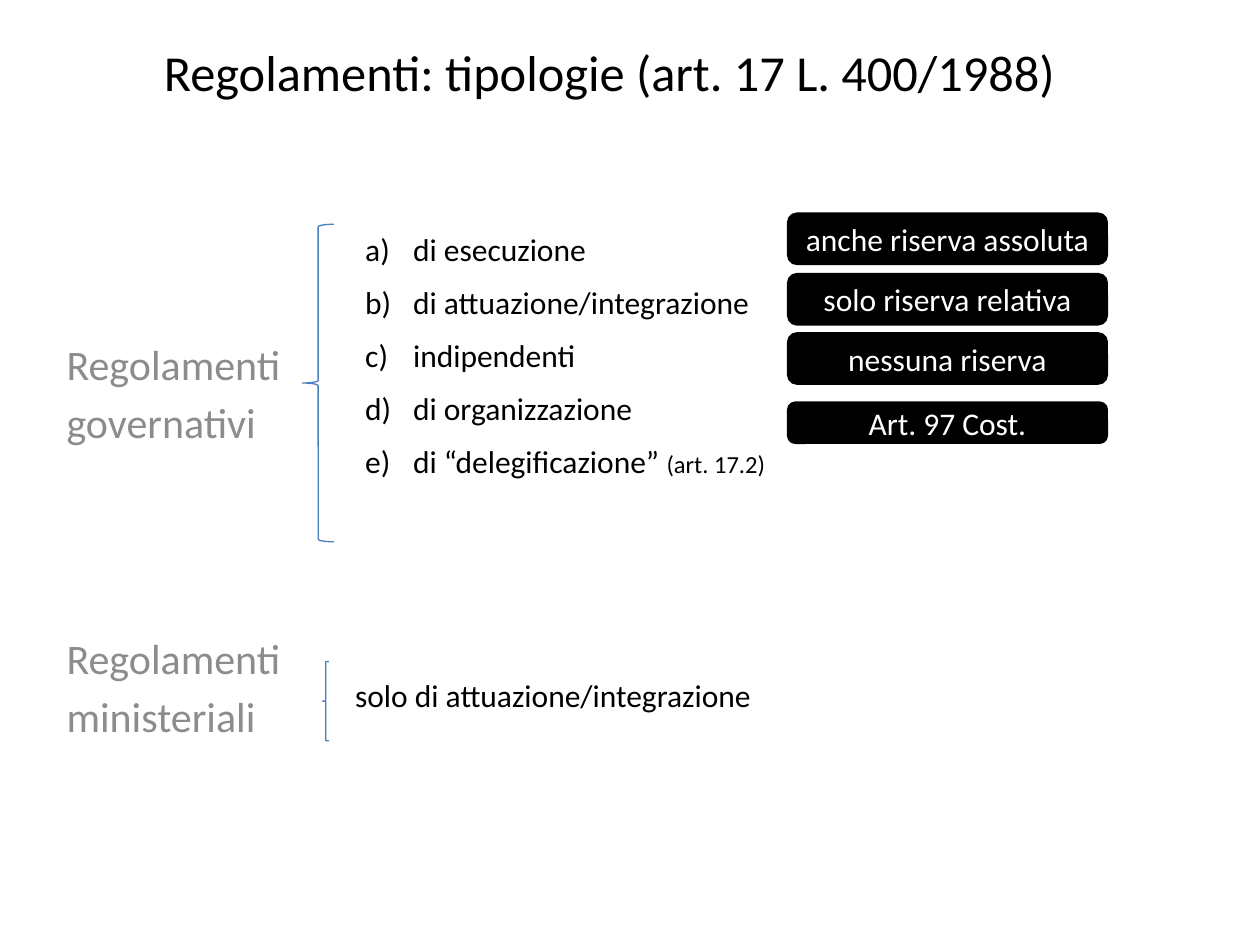
import dataclasses

import pptx
import pptx.dml.color
import pptx.enum.shapes
import pptx.enum.text
import pptx.oxml
import pptx.oxml.ns
import pptx.util

Inches = pptx.util.Inches
Pt = pptx.util.Pt
SHAPE = pptx.enum.shapes.MSO_SHAPE
ALIGN = pptx.enum.text.PP_ALIGN
ANCHOR = pptx.enum.text.MSO_ANCHOR


@dataclasses.dataclass(frozen=True)
class Theme:
    font: str = "Calibri"
    ink: str = "000000"
    muted: str = "8C8C8C"
    inverse: str = "FFFFFF"
    brace: str = "4B7EBC"
    title: float = 28.8
    label: float = 24
    body: float = 18
    note: float = 14


class SlideBuilder:
    """Draws the elements of one slide in a shared style."""

    def __init__(self, slide, theme):
        self.slide = slide
        self.theme = theme

    def color(self, value):
        return pptx.dml.color.RGBColor.from_string(value)

    def style(self, r, size, color):
        r.font.name = self.theme.font
        r.font.size = Pt(size)
        r.font.color.rgb = self.color(color)

    def text(self, box, lines, size, color=None, gap=0, align=ALIGN.LEFT, anchor=ANCHOR.TOP):
        sp = self.slide.shapes.add_textbox(*map(Inches, box))
        tf = sp.text_frame
        tf.word_wrap = True
        tf.vertical_anchor = anchor
        tf.text = "\n".join(lines)
        for i, p in enumerate(tf.paragraphs):
            p.alignment = align
            p.space_before = Pt(gap if i else 0)
            for r in p.runs:
                self.style(r, size, color or self.theme.ink)
        return tf

    def lettered_list(self, box, items, gap):
        tf = self.text(box, items, self.theme.body, gap=gap)
        for p in tf.paragraphs:
            pPr = p._p.get_or_add_pPr()
            pPr.set("marL", str(Inches(0.38)))
            pPr.set("indent", str(-Inches(0.38)))
            bullet = pptx.oxml.parse_xml(
                f'<a:buAutoNum {pptx.oxml.ns.nsdecls("a")} type="alphaLcParenR"/>')
            pPr.append(bullet)
        return tf

    def note(self, p, text):
        r = p.add_run()
        r.text = text
        self.style(r, self.theme.note, self.theme.ink)

    def shape(self, kind, box, line, width):
        sp = self.slide.shapes.add_shape(kind, *map(Inches, box))
        sp.shadow.inherit = False
        sp.line.color.rgb = self.color(line)
        sp.line.width = Pt(width)
        return sp

    def brace(self, box):
        sp = self.shape(SHAPE.LEFT_BRACE, box, self.theme.brace, 0.75)
        sp.fill.background()

    def tag(self, box, text):
        sp = self.shape(SHAPE.ROUNDED_RECTANGLE, box, self.theme.ink, 2)
        sp.fill.solid()
        sp.fill.fore_color.rgb = self.color(self.theme.ink)
        tf = sp.text_frame
        tf.margin_left = tf.margin_right = Inches(0.05)
        tf.vertical_anchor = ANCHOR.MIDDLE
        tf.text = text
        p = tf.paragraphs[0]
        p.alignment = ALIGN.CENTER
        self.style(p.runs[0], self.theme.body, self.theme.inverse)


def main():
    prs = pptx.Presentation()
    prs.slide_width, prs.slide_height = Inches(10), Inches(7.5)
    theme = Theme()
    s = SlideBuilder(prs.slides.add_slide(prs.slide_layouts[6]), theme)

    s.text((0.59, 0.29, 8.5, 0.55), ["Regolamenti: tipologie (art. 17 L. 400/1988)"],
           theme.title, align=ALIGN.CENTER, anchor=ANCHOR.MIDDLE)
    for top, kind in ((2.64, "governativi"), (4.97, "ministeriali")):
        s.text((0.43, top, 2, 1), ["Regolamenti", kind], theme.label, theme.muted, gap=4.3)

    s.brace((2.4, 1.78, 0.25, 2.52))
    tf = s.lettered_list((2.8, 1.78, 3.39, 2.21), [
        "di esecuzione",
        "di attuazione/integrazione",
        "indipendenti",
        "di organizzazione",
        "di “delegificazione” ",
    ], gap=8.6)
    s.note(tf.paragraphs[-1], "(art. 17.2)")

    s.brace((2.56, 5.25, 0.05, 0.63))
    s.text((2.72, 5.32, 3.86, 0.4), ["solo di attuazione/integrazione"], theme.body)

    for top, height, text in (
        (1.7, 0.39, "anche riserva assoluta"),
        (2.18, 0.39, "solo riserva relativa"),
        (2.65, 0.39, "nessuna riserva"),
        (3.2, 0.31, "Art. 97 Cost."),
    ):
        s.tag((6.26, top, 2.52, height), text)

    prs.save("out.pptx")


if __name__ == "__main__":
    main()
